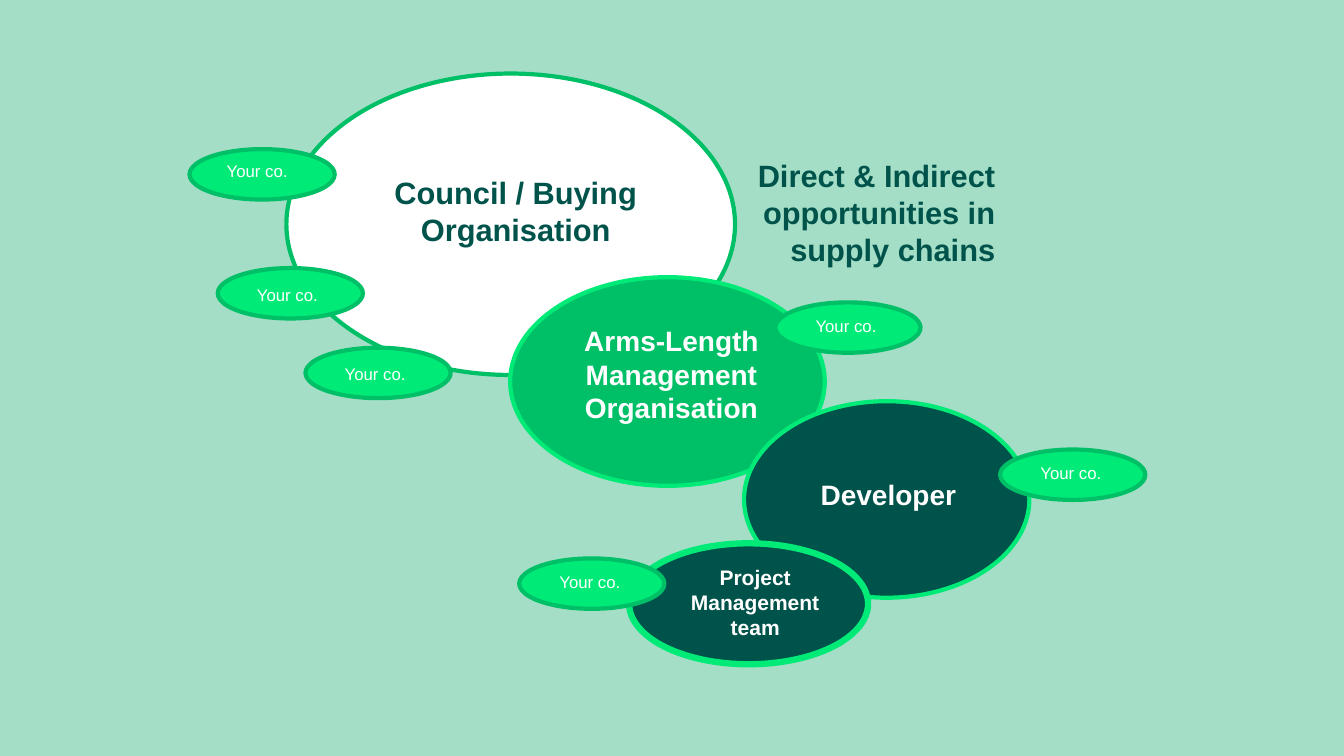
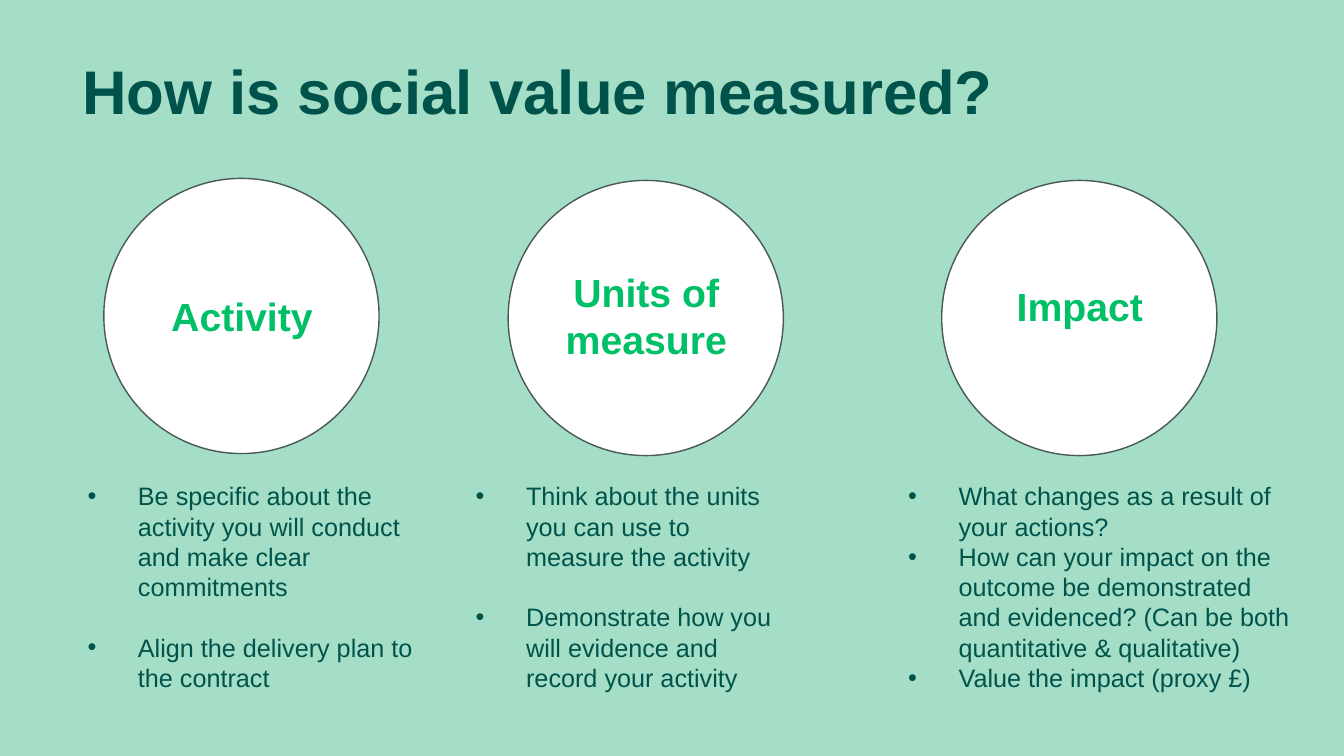
import pptx
import pptx.dml.color
import pptx.enum.shapes
import pptx.enum.text
import pptx.oxml
import pptx.util
from pptx.util import Inches

MINT = "A4DEC7"
DARK = "00534B"
GREEN = "00C067"
BRIGHT = "00EA78"
WHITE = "FFFFFF"
GREY = "4A5858"
FONT = "Arial"
ALIGNMENTS = {
    "left": pptx.enum.text.PP_ALIGN.LEFT,
    "center": pptx.enum.text.PP_ALIGN.CENTER,
    "right": pptx.enum.text.PP_ALIGN.RIGHT,
}


def add_text(slide, box, text, size, color=DARK, bold=False, align="left",
             wrap=True, middle=False, bullet=False, gap=0, line_spacing=None):
    """Add a text box; each line of the text is one paragraph."""
    text_box = slide.shapes.add_textbox(*map(Inches, box))
    frame = text_box.text_frame
    frame.word_wrap = wrap
    if middle:
        frame.vertical_anchor = pptx.enum.text.MSO_ANCHOR.MIDDLE
    for index, line in enumerate(text.split("\n")):
        paragraph = frame.add_paragraph() if index else frame.paragraphs[0]
        paragraph.alignment = ALIGNMENTS[align]
        if line_spacing:
            paragraph.line_spacing = line_spacing
        if index and gap:
            paragraph.space_before = pptx.util.Pt(gap)
        if bullet:
            properties = paragraph._p.get_or_add_pPr()
            properties.set("marL", str(Inches(0.5)))
            properties.set("indent", str(Inches(-0.5)))
            properties.append(pptx.oxml.parse_xml(
                '<a:buFont xmlns:a="http://schemas.openxmlformats.org/drawingml/2006/main" typeface="Arial"/>'))
            properties.append(pptx.oxml.parse_xml(
                '<a:buChar xmlns:a="http://schemas.openxmlformats.org/drawingml/2006/main" char="•"/>'))
        run = paragraph.add_run()
        run.text = line
        run.font.name = FONT
        run.font.size = pptx.util.Pt(size)
        run.font.bold = bold
        run.font.color.rgb = pptx.dml.color.RGBColor.from_string(color)


def add_ellipse(slide, box, fill, line, width):
    shape = slide.shapes.add_shape(
        pptx.enum.shapes.MSO_SHAPE.OVAL, *map(Inches, box))
    shape.shadow.inherit = False
    shape.fill.solid()
    shape.fill.fore_color.rgb = pptx.dml.color.RGBColor.from_string(fill)
    shape.line.color.rgb = pptx.dml.color.RGBColor.from_string(line)
    shape.line.width = pptx.util.Pt(width)


# Presentation and shared background
presentation = pptx.Presentation()
presentation.slide_width = Inches(13.33)
presentation.slide_height = Inches(7.5)
background = presentation.slide_master.background.fill
background.solid()
background.fore_color.rgb = pptx.dml.color.RGBColor.from_string(MINT)
blank_layout = presentation.slide_layouts[6]

# Slide 1: supply chain
slide = presentation.slides.add_slide(blank_layout)
add_text(slide, (7.26, 1.51, 2.71, 1.21),
         "Direct & Indirect opportunities in supply chains",
         size=22, bold=True, align="right")

# Organisations: ellipse, fill, line, line width, text box, name, size, colour, wrap
organisations = [
    ((2.84, 0.73, 4.45, 2.99), WHITE, GREEN, 3,
     (2.84, 1.67, 4.55, 0.84), "Council / Buying Organisation", 22, DARK, True),
    ((5.06, 2.75, 3.12, 2.07), GREEN, BRIGHT, 3,
     (5.49, 3.16, 2.34, 1.11), "Arms-Length Management Organisation", 20, WHITE, True),
    ((7.38, 3.98, 2.83, 1.95), DARK, BRIGHT, 3,
     (8.04, 4.69, 1.55, 0.72), "Developer", 20, WHITE, False),
    ((6.24, 5.39, 2.37, 1.2), DARK, BRIGHT, 4.5,
     (6.47, 5.55, 2.04, 0.86), "Project Management\nteam", 15, WHITE, True),
]
for oval, fill, line, width, box, name, size, color, wrap in organisations:
    add_ellipse(slide, oval, fill, line, width)
    add_text(slide, box, name, size=size, color=color, bold=True,
             align="center" if wrap else "left", wrap=wrap)

# Suppliers: ellipse corner and label offset
suppliers = [
    (2.16, 2.66, 0.29, 0.12),
    (1.88, 1.48, 0.27, 0.07),
    (3.03, 3.45, 0.29, 0.11),
    (7.69, 3.0, 0.3, 0.08),
    (5.15, 5.54, 0.3, 0.08),
    (9.92, 4.46, 0.3, 0.08),
]
for left, top, offset_x, offset_y in suppliers:
    add_ellipse(slide, (left, top, 1.44, 0.5), BRIGHT, GREEN, 3)
    add_text(slide, (left + offset_x, top + offset_y, 0.81, 0.3), "Your co.",
             size=12, color=WHITE, wrap=False)

# Slide 2: measuring social value
slide = presentation.slides.add_slide(blank_layout)
add_text(slide, (0.72, 0.21, 11.5, 1.45), "How is social value measured?",
         size=44, bold=True, middle=True, line_spacing=0.9)

# Columns: circle corner, heading box, heading, bullet left and width, gap, bullets
columns = [
    (1.03, 1.77, (1.15, 2.85, 2.5, 0.57), "Activity", 0.77, 3.66, 21.6,
     "Be specific about the activity you will conduct and make clear commitments\n"
     "Align the delivery plan to the contract"),
    (5.04, 1.79, (5.16, 2.61, 2.5, 1.04), "Units of measure", 4.62, 3.33, 21.6,
     "Think about the units you can use to measure the activity\n"
     "Demonstrate how you will evidence and record your activity"),
    (9.34, 1.79, (9.58, 2.75, 2.26, 0.57), "Impact", 8.91, 4.07, 0,
     "What changes as a result of your actions?\n"
     "How can your impact on the outcome be demonstrated and evidenced? "
     "(Can be both quantitative & qualitative)\n"
     "Value the impact (proxy £)"),
]
for left, top, heading_box, heading, text_left, text_width, gap, bullets in columns:
    add_ellipse(slide, (left, top, 2.73, 2.73), WHITE, GREY, 1)
    add_text(slide, heading_box, heading, size=28, color=GREEN, bold=True,
             align="center")
    add_text(slide, (text_left, 4.72, text_width, 2.22), bullets, size=18,
             bullet=True, gap=gap)

presentation.save("out.pptx")
